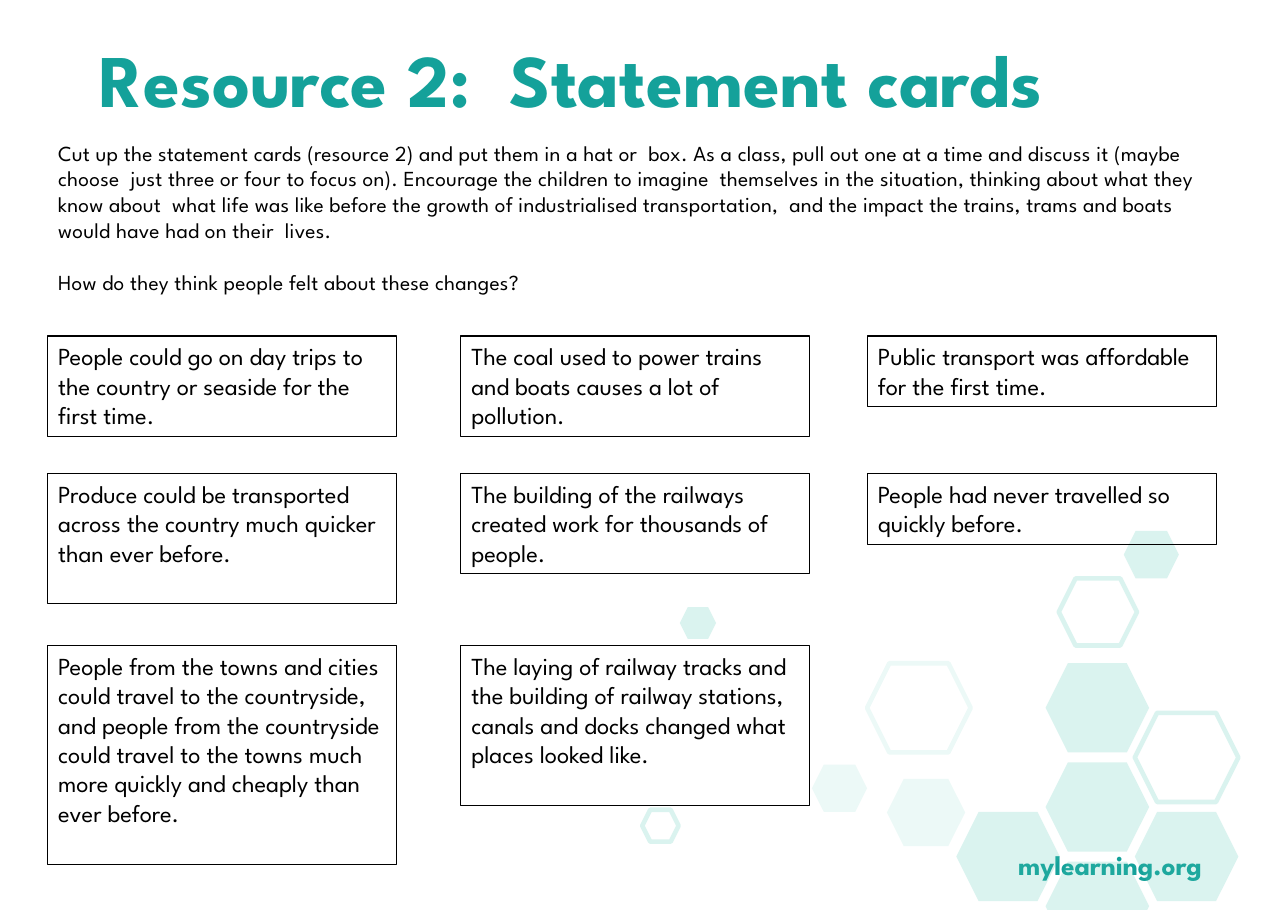
import lxml.etree
import pptx
import pptx.util
import pptx.dml.color
import pptx.enum.shapes
import pptx.enum.text
import pptx.oxml.ns

# Content
TITLE = "Resource 2:  Statement cards"
SITE = "mylearning.org"
INTRO = [
    "Cut up the statement cards (resource 2) and put them in a hat or  box. As a class, "
    "pull out one at a time and discuss it (maybe choose  just three or four to focus on). "
    "Encourage the children to imagine  themselves in the situation, thinking about what they "
    "know about  what life was like before the growth of industrialised transportation,  "
    "and the impact the trains, trams and boats would have had on their  lives.",
    "How do they think people felt about these changes?",
]
# Cards: column, row, height, text
CARDS = [
    (0, 0, 0.91, "People could go on day trips to the country or seaside for the first time."),
    (0, 1, 1.18, "Produce could be transported across the country much quicker than ever before."),
    (0, 2, 1.99, "People from the towns and cities could travel to the countryside, and people "
                 "from the countryside could travel to the towns much more quickly and cheaply "
                 "than ever before."),
    (1, 2, 1.45, "The laying of railway tracks and the building of railway stations, canals and "
                 "docks changed what places looked like."),
    (1, 1, 0.91, "The building of the railways created work for thousands of people."),
    (1, 0, 0.91, "The coal used to power trains and boats causes a lot of pollution."),
    (2, 0, 0.64, "Public transport was affordable for the first time."),
    (2, 1, 0.64, "People had never travelled so quickly before."),
]
# Large hexagons: lattice column, half-row, filled, opacity %
LATTICE = [
    (1, 3, True, 20), (2, 2, True, 20), (2, 4, True, 20), (3, 3, True, 20),
    (0, 0, False, 10), (2, 0, True, 20), (3, 1, False, 20),
]
# Loose hexagons: left, top, size, filled, opacity %
LOOSE = [
    (9.61, 5.25, "medium", False, 20), (10.2, 4.82, "small", True, 20),
    (8.05, 7.07, "medium", True, 10), (6.17, 5.51, "tiny", True, 20),
    (7.37, 6.94, "small", True, 10), (5.83, 7.35, "tiny", False, 20),
]

# Layout and style
WIDTH, HEIGHT = 11.69, 8.26
COLS, ROWS, CARD_W = (0.43, 4.18, 7.87), (3.05, 4.3, 5.86), 3.17
HEX_LEFT, HEX_TOP, HEX_DX, HEX_DY = 7.87, 6.02, 0.81, 0.45
HEX_SIZES = {"large": (0.94, 0.81), "medium": (0.71, 0.61),
             "small": (0.5, 0.43), "tiny": (0.33, 0.29)}
FONT = "League Spartan"
COLORS = {"teal": "14A19A", "mint": "49C5B1", "black": "000000"}

Inches, Pt = pptx.util.Inches, pptx.util.Pt
SHAPE = pptx.enum.shapes.MSO_SHAPE
ALIGN = pptx.enum.text.PP_ALIGN
qn = pptx.oxml.ns.qn


def rgb(name):
    return pptx.dml.color.RGBColor.from_string(COLORS[name])


def write(sp, *paragraphs, size, color="black", bold=False, align=ALIGN.LEFT,
          inset=None, gap=0, spacing=0, raised=0):
    tf = sp.text_frame
    tf.word_wrap = True
    tf.vertical_anchor = pptx.enum.text.MSO_ANCHOR.TOP
    if inset is not None:
        tf.margin_left = tf.margin_right = tf.margin_top = tf.margin_bottom = Inches(inset)
    for i, text in enumerate(paragraphs):
        p = tf.add_paragraph() if i else tf.paragraphs[0]
        p.alignment = align
        if i:
            p.space_before = Pt(gap)
        r = p.add_run()
        r.text = text
        r.font.name, r.font.size, r.font.bold = FONT, Pt(size), bold
        r.font.color.rgb = rgb(color)
        props = r._r.get_or_add_rPr()
        if spacing:
            props.set("spc", str(spacing))
        if raised:
            props.set("baseline", str(raised * 1000))


def textbox(s, left, top, width, height):
    return s.shapes.add_textbox(*map(Inches, (left, top, width, height)))


def outline(s, kind, left, top, width, height, color, weight):
    sp = s.shapes.add_shape(kind, *map(Inches, (left, top, width, height)))
    sp.shadow.inherit = False
    sp.fill.background()
    sp.line.color.rgb = rgb(color)
    sp.line.width = Pt(weight)
    return sp


def hexagon(s, left, top, size, filled, opacity):
    sp = outline(s, SHAPE.HEXAGON, left, top, *HEX_SIZES[size], "mint", 3)
    if filled:
        sp.line.fill.background()
        sp.fill.solid()
        sp.fill.fore_color.rgb = rgb("mint")
    for clr in list(sp._element.spPr.iter(qn("a:srgbClr"))):
        lxml.etree.SubElement(clr, qn("a:alpha")).set("val", str(opacity * 1000))


def main():
    prs = pptx.Presentation()
    prs.slide_width, prs.slide_height = Inches(WIDTH), Inches(HEIGHT)
    s = prs.slides.add_slide(prs.slide_layouts[6])

    # Title and web address
    write(textbox(s, 0.27, 0.3, 9.83, 0.82), TITLE, size=48.5, color="teal",
          bold=True, align=ALIGN.CENTER, inset=0)
    write(textbox(s, 6.58, 7.65, 4.33, 0.35), SITE, size=30.9, color="teal",
          bold=True, align=ALIGN.RIGHT, inset=0, raised=30)

    # Hexagon pattern
    for col, row, filled, opacity in LATTICE:
        hexagon(s, HEX_LEFT + col * HEX_DX, HEX_TOP + row * HEX_DY, "large", filled, opacity)
    for loose in LOOSE:
        hexagon(s, *loose)

    # Instructions
    write(textbox(s, COLS[0], 1.22, 10.67, 1.75), *INTRO, size=14, gap=16.9, spacing=15)

    # Statement cards
    for col, row, height, text in CARDS:
        card = outline(s, SHAPE.RECTANGLE, COLS[col], ROWS[row], CARD_W, height, "black", 0.75)
        write(card, text, size=16)

    prs.save("out.pptx")


if __name__ == "__main__":
    main()
